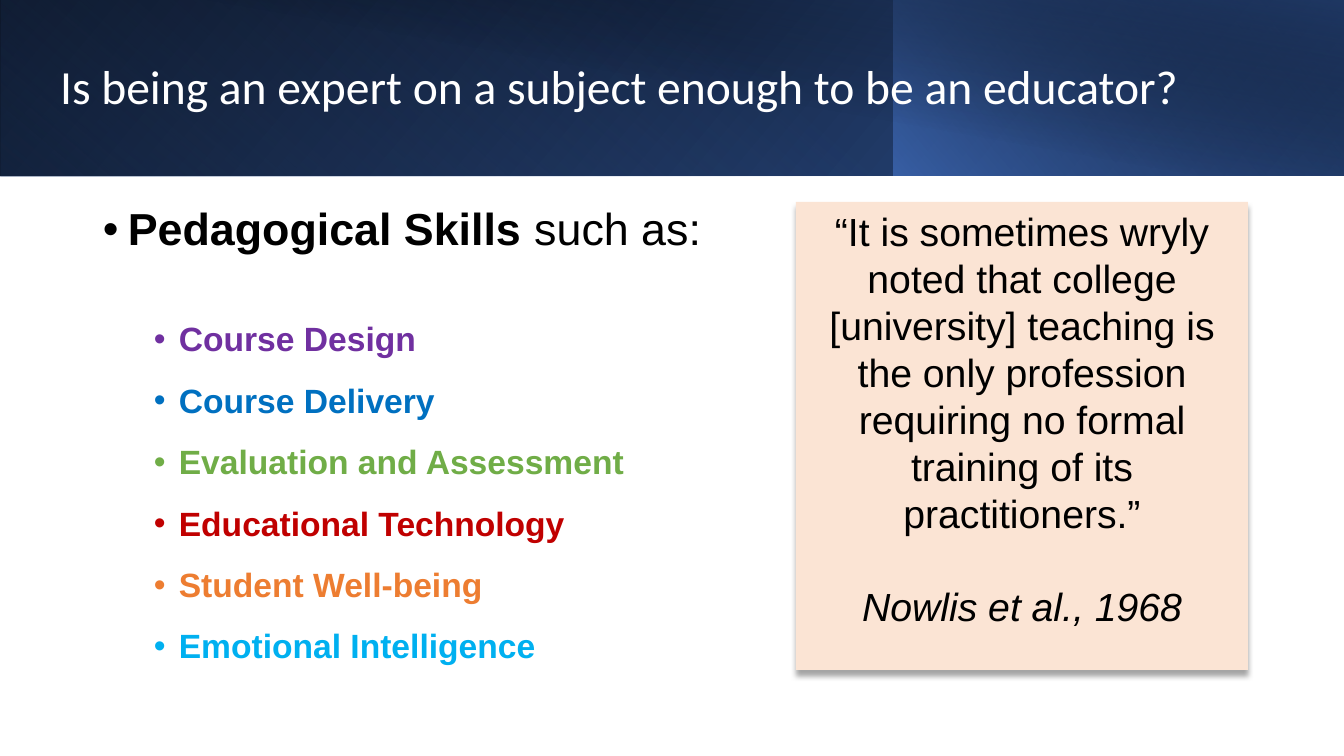
from lxml.etree import SubElement
from pptx import Presentation
from pptx.dml.color import RGBColor
from pptx.enum.shapes import MSO_SHAPE
from pptx.enum.text import MSO_ANCHOR, PP_ALIGN
from pptx.oxml.ns import qn
from pptx.util import Pt

PX = 12192000 / 1344
COLORS = {
    "black": "000000", "white": "FFFFFF", "navy": "1F3864", "royal": "2F5496",
    "accent": "4472C4", "peach": "FBE4D4", "shadow": "A5A5A5", "purple": "7030A0",
    "blue": "0070C0", "green": "70AD47", "red": "C00000", "orange": "ED7D31",
    "sky": "00B0F0",
}


def px(*lengths):
    return [round(n * PX) for n in lengths]


def write(p, text, size, color="black", font="Arial", bold=False, italic=False,
          align=PP_ALIGN.LEFT, spacing=None, before=0, bullet_at=None):
    """Add a run to p; bullet_at is the text indent in px of a bulleted line."""
    p.alignment, p.space_before = align, Pt(before)
    if spacing:
        p.line_spacing = spacing
    if bullet_at:
        margin, hang = px(bullet_at, 25)
        pPr = p._p.get_or_add_pPr()
        pPr.set("marL", str(margin))
        pPr.set("indent", str(-hang))
        clr = SubElement(pPr, qn("a:buClr"))
        SubElement(clr, qn("a:srgbClr"), val=COLORS[color])
        SubElement(pPr, qn("a:buFont"), typeface="Arial")
        SubElement(pPr, qn("a:buChar"), char="•")
    r = p.add_run()
    r.text = text
    r.font.name, r.font.size = font, Pt(size)
    r.font.bold, r.font.italic = bold, italic
    r.font.color.rgb = RGBColor.from_string(COLORS[color])


prs = Presentation()
prs.slide_width, prs.slide_height = px(1344, 756)
slide = prs.slides.add_slide(prs.slide_layouts[5])
title = slide.shapes.title

# Header: box, rotation, mirrored, angle, stops of (position, colour, opacity)
bands = [
    ((0, 0, 1344, 176), 0, True, 140, [(0, "black", 100), (100, "royal", 100)]),
    ((0, 0, 895, 176), 180, True, 230,
     [(0, "accent", 0), (20, "accent", 0), (100, "navy", 55)]),
    ((894, 0, 450, 176), 0, True, 220, [(0, "accent", 66), (100, "black", 30)]),
    ((50, 0, 1294, 176), 0, False, 280,
     [(0, "black", 0), (50, "black", 0), (99, "navy", 52), (100, "navy", 52)]),
]
for box, rotation, mirrored, angle, stops in bands:
    sp = slide.shapes.add_shape(MSO_SHAPE.RECTANGLE, *px(*box))
    sp.rotation = rotation
    sp.shadow.inherit = False
    sp.line.fill.background()
    sp.fill.gradient()
    spPr = sp._element.spPr
    if mirrored:
        spPr.find(qn("a:xfrm")).set("flipH", "1")
    grad = spPr.find(qn("a:gradFill"))
    for child in list(grad):
        grad.remove(child)
    gs_list = SubElement(grad, qn("a:gsLst"))
    for position, color, opacity in stops:
        gs = SubElement(gs_list, qn("a:gs"), pos=str(position * 1000))
        clr = SubElement(gs, qn("a:srgbClr"), val=COLORS[color])
        if opacity < 100:
            SubElement(clr, qn("a:alpha"), val=str(opacity * 1000))
    SubElement(grad, qn("a:lin"), ang=str(angle * 60000), scaled="0")
    title._element.addprevious(sp._element)

title.left, title.top, title.width, title.height = px(50, 32, 1144, 114)
tf = title.text_frame
tf.vertical_anchor = MSO_ANCHOR.MIDDLE
write(tf.paragraphs[0], "Is being an expert on a subject enough to be an educator?",
      34, color="white", font="Calibri", spacing=0.9)

# Skills list
tf = slide.shapes.add_textbox(*px(93, 202, 619, 498)).text_frame
tf.word_wrap = True
p = tf.paragraphs[0]
write(p, "Pedagogical Skills ", 32, bold=True, spacing=0.9, bullet_at=25)
write(p, "such as:", 32, spacing=0.9)
skills = [
    ("Course Design", "purple"),
    ("Course Delivery", "blue"),
    ("Evaluation and Assessment", "green"),
    ("Educational Technology", "red"),
    ("Student Well-being", "orange"),
    ("Emotional Intelligence", "sky"),
]
for i, (skill, color) in enumerate(skills):
    write(tf.add_paragraph(), skill, 24, color=color, bold=True, spacing=0.9,
          before=18 if i else 48, bullet_at=76)

# Quote card
card = slide.shapes.add_shape(MSO_SHAPE.RECTANGLE, *px(796, 202, 452, 468))
card.fill.solid()
card.fill.fore_color.rgb = RGBColor.from_string(COLORS["peach"])
card.line.fill.background()
card.shadow.inherit = False
shadow = SubElement(card._element.spPr.find(qn("a:effectLst")), qn("a:outerShdw"),
                    blurRad=str(Pt(4)), dist=str(Pt(4)), dir=str(90 * 60000),
                    algn="t", rotWithShape="0")
SubElement(shadow, qn("a:srgbClr"), val=COLORS["shadow"])
tf = card.text_frame
tf.word_wrap = True
tf.vertical_anchor = MSO_ANCHOR.TOP
write(tf.paragraphs[0],
      "“It is sometimes wryly noted that college [university] teaching is the only "
      "profession requiring no formal training of its practitioners.”",
      28, align=PP_ALIGN.CENTER)
write(tf.add_paragraph(), "Nowlis et al., 1968", 28, italic=True,
      align=PP_ALIGN.CENTER, before=33)

prs.save("out.pptx")
